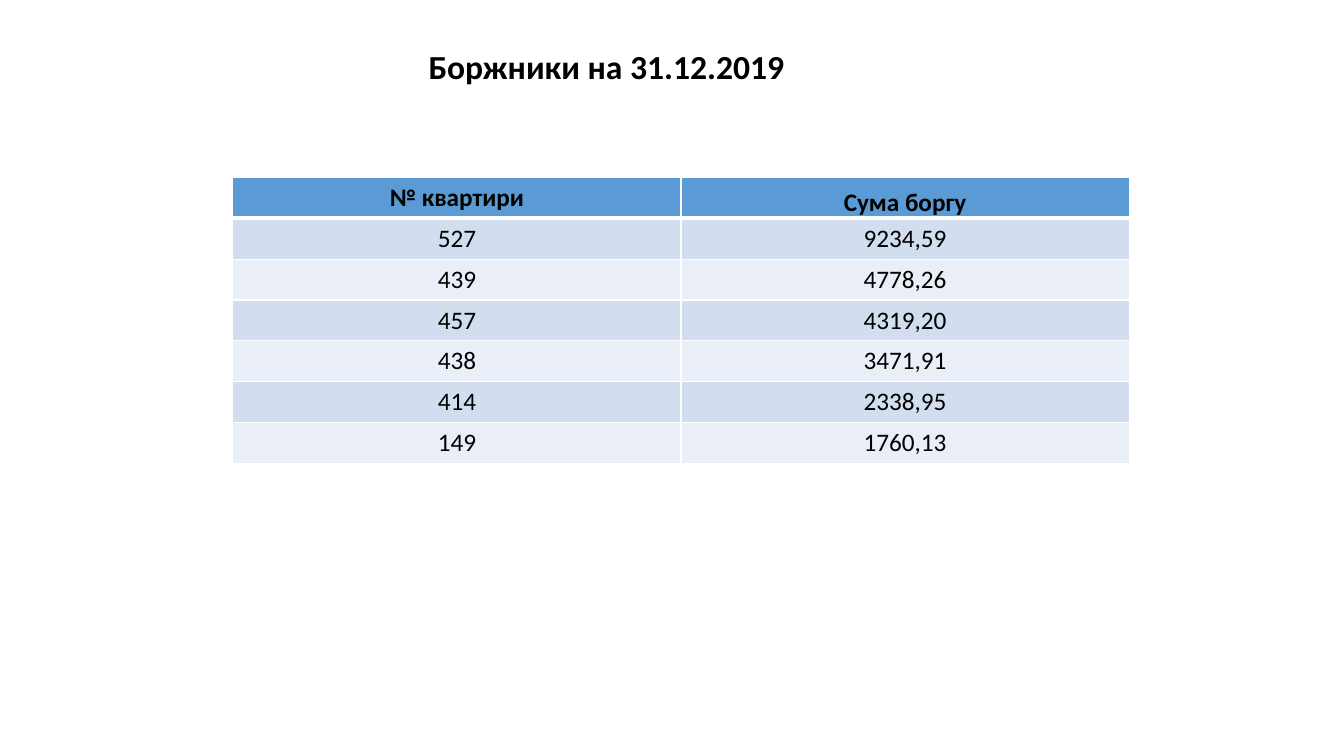
"""Build a slide listing apartment debtors and the amounts they owe."""
import pptx
import pptx.dml.color
import pptx.enum.text
import pptx.oxml.ns
import pptx.util
from lxml import etree
from pptx.util import Inches

COLORS = {
    "text": "000000",
    "border": "FFFFFF",
    "header": "5B9BD5",
    "dark_band": "D2DEEF",
    "light_band": "EAEFF7",
}
DEBTS = [
    ("№ квартири", "Сума боргу"),
    ("527", "9234,59"),
    ("439", "4778,26"),
    ("457", "4319,20"),
    ("438", "3471,91"),
    ("414", "2338,95"),
    ("149", "1760,13"),
]


def write_text(text_frame, text, size=18, bold=False, align=pptx.enum.text.PP_ALIGN.CENTER):
    paragraph = text_frame.paragraphs[0]
    paragraph.alignment = align
    run = paragraph.add_run()
    run.text = text
    run.font.name = "Calibri"
    run.font.size = pptx.util.Pt(size)
    run.font.bold = bold
    run.font.color.rgb = pptx.dml.color.RGBColor.from_string(COLORS["text"])


def add_border(cell, side, width):
    properties = cell._tc.get_or_add_tcPr()
    line = etree.SubElement(properties, pptx.oxml.ns.qn(f"a:ln{side}"), w=str(pptx.util.Pt(width)))
    fill = etree.SubElement(line, pptx.oxml.ns.qn("a:solidFill"))
    etree.SubElement(fill, pptx.oxml.ns.qn("a:srgbClr"), val=COLORS["border"])


presentation = pptx.Presentation()
presentation.slide_width = Inches(13.33)
presentation.slide_height = Inches(7.5)
slide = presentation.slides.add_slide(presentation.slide_layouts[5])

title = slide.shapes.title
title.left, title.top = Inches(4.15), Inches(0.41)
title.width, title.height = Inches(3.76), Inches(0.5)
title.text_frame.word_wrap = False
title.text_frame.auto_size = pptx.enum.text.MSO_AUTO_SIZE.SHAPE_TO_FIT_TEXT
title.text_frame.vertical_anchor = pptx.enum.text.MSO_ANCHOR.TOP
write_text(title.text_frame, "Боржники на 31.12.2019", size=24, bold=True,
           align=pptx.enum.text.PP_ALIGN.LEFT)

table = slide.shapes.add_table(
    len(DEBTS), 2, Inches(2.31), Inches(1.76), Inches(8.89), Inches(2.84)
).table

for row_index, values in enumerate(DEBTS):
    is_header = row_index == 0
    band = "header" if is_header else "dark_band" if row_index % 2 else "light_band"
    for column_index, value in enumerate(values):
        cell = table.cell(row_index, column_index)
        write_text(cell.text_frame, value, bold=is_header)
        add_border(cell, "L", 1)
        add_border(cell, "R", 1)
        add_border(cell, "T", 3 if row_index == 1 else 1)
        add_border(cell, "B", 3 if is_header else 1)
        cell.fill.solid()
        cell.fill.fore_color.rgb = pptx.dml.color.RGBColor.from_string(COLORS[band])

debt_header = table.cell(0, 1)
debt_header.vertical_anchor = pptx.enum.text.MSO_ANCHOR.BOTTOM
debt_header.margin_left = debt_header.margin_right = debt_header.margin_top = Inches(0.01)
debt_header.margin_bottom = Inches(0)

presentation.save("out.pptx")
